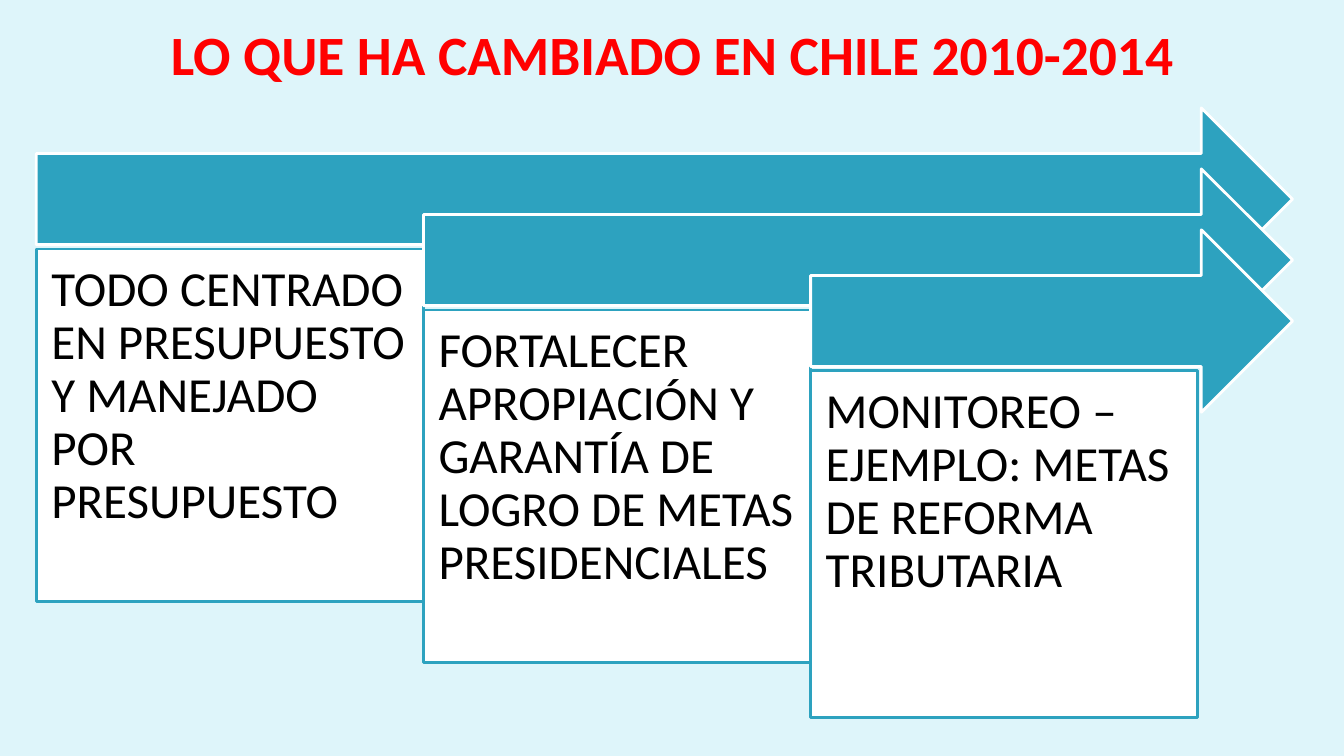
from pptx import Presentation
from pptx.dml.color import RGBColor
from pptx.enum.shapes import MSO_SHAPE as Shape
from pptx.enum.text import MSO_ANCHOR as Anchor, PP_ALIGN as Align
from pptx.util import Inches, Pt

TITLE = "LO QUE HA CAMBIADO EN CHILE 2010-2014"
STEPS = [
    ("TODO CENTRADO EN PRESUPUESTO Y MANEJADO POR PRESUPUESTO", 3.5),
    ("FORTALECER APROPIACIÓN Y GARANTÍA DE LOGRO DE METAS PRESIDENCIALES", 3.5),
    ("MONITOREO – EJEMPLO: METAS DE REFORMA TRIBUTARIA", 3.44),
]
BACKGROUND, TEAL, WHITE, RED, BLACK = "DEF5FA", "2DA2BF", "FFFFFF", "FF0000", "000000"
LEFT, RIGHT, TOP = 0.36, 12.82, 1.07
COLUMN, DROP = 3.84, 0.605
ARROW_HEIGHT, CARD_OFFSET = 1.81, 1.4


def color(value):
    """Turn a hex string into a colour."""
    return RGBColor.from_string(value)


def add_panel(page, kind, place, fill, line):
    """Add a filled and outlined shape without shadow."""
    panel = page.shapes.add_shape(kind, *map(Inches, place))
    panel.shadow.inherit = False
    panel.fill.solid()
    panel.fill.fore_color.rgb = color(fill)
    panel.line.color.rgb = color(line)
    panel.line.width = Pt(2)
    return panel


def write(box, text, size, ink, bold=False, align=Align.LEFT, anchor=Anchor.TOP,
          inset=0.15, spacing=1.0):
    """Write one formatted paragraph into a shape."""
    frame = box.text_frame
    frame.word_wrap = True
    frame.vertical_anchor = anchor
    frame.margin_left = frame.margin_right = Inches(inset)
    frame.margin_top = frame.margin_bottom = Inches(inset)
    para = frame.paragraphs[0]
    para.alignment = align
    para.line_spacing = spacing
    span = para.add_run()
    span.text = text
    span.font.name = "Calibri"
    span.font.size = Pt(size)
    span.font.bold = bold
    span.font.color.rgb = color(ink)


def main():
    """Build the slide and save it."""
    deck = Presentation()
    deck.slide_width, deck.slide_height = Inches(13.33), Inches(7.5)
    page = deck.slides.add_slide(deck.slide_layouts[6])
    page.background.fill.solid()
    page.background.fill.fore_color.rgb = color(BACKGROUND)

    title = page.shapes.add_textbox(*map(Inches, (0.67, 0.3, 12, 0.45)))
    write(title, TITLE, 39.6, RED, bold=True, align=Align.CENTER,
          anchor=Anchor.MIDDLE, inset=0.05)

    for index, (text, height) in enumerate(STEPS):
        left, top = LEFT + index * COLUMN, TOP + index * DROP
        add_panel(page, Shape.RIGHT_ARROW,
                  (left, top, RIGHT - left, ARROW_HEIGHT), TEAL, WHITE)
        card = add_panel(page, Shape.RECTANGLE,
                         (left, top + CARD_OFFSET, COLUMN, height), WHITE, TEAL)
        write(card, text, 35, BLACK, spacing=0.9)

    deck.save("out.pptx")


if __name__ == "__main__":
    main()
